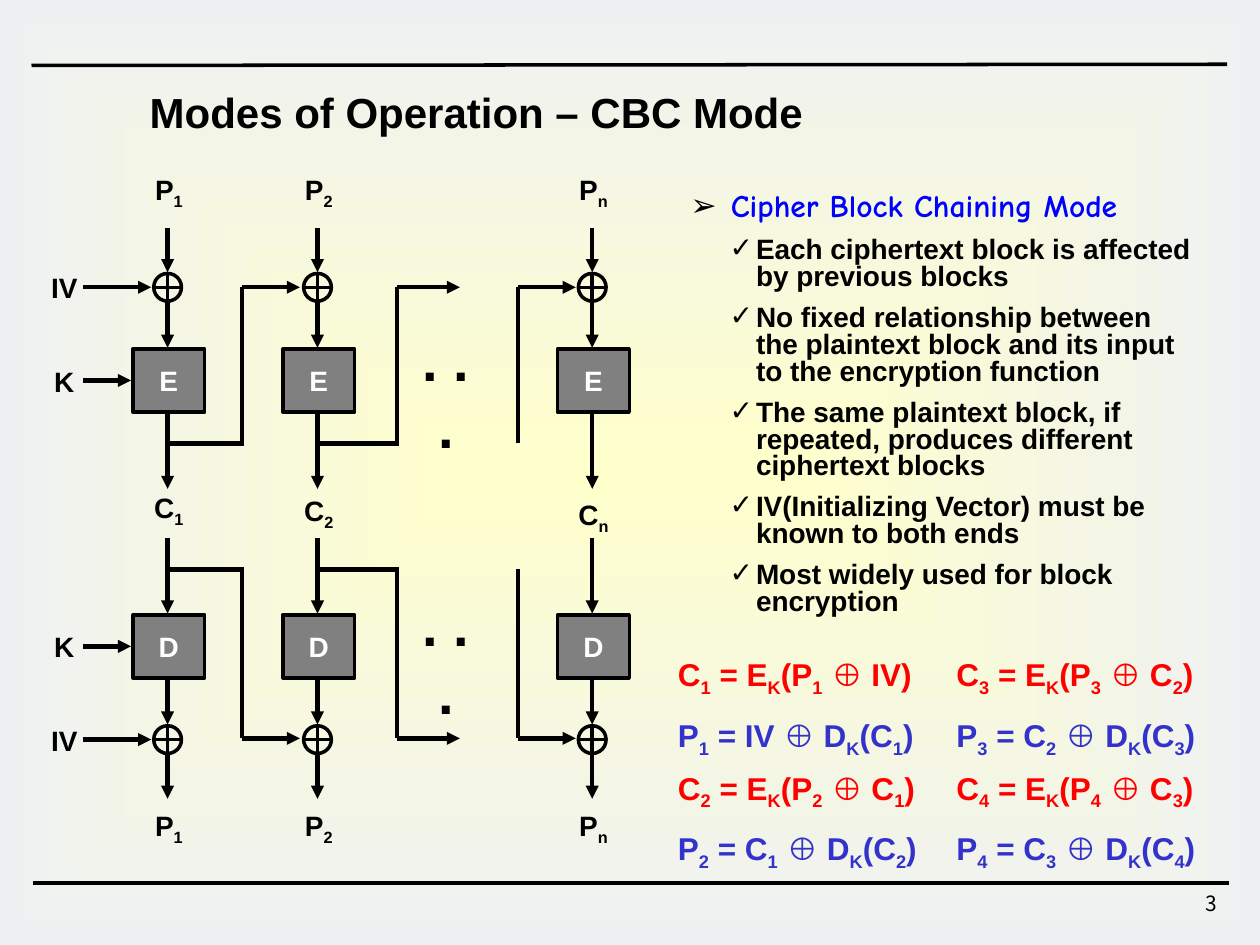
from lxml import etree
from pptx import Presentation
from pptx import util as u
from pptx.dml.color import RGBColor
from pptx.enum import shapes, text
from pptx.oxml import ns

BLACK = RGBColor(0x00, 0x00, 0x00)
WHITE = RGBColor(0xFF, 0xFF, 0xFF)
GRAY = RGBColor(0x80, 0x80, 0x80)
BLUE = RGBColor(0x00, 0x00, 0xFF)
INDIGO = RGBColor(0x33, 0x33, 0xCC)
RED = RGBColor(0xFF, 0x00, 0x00)
CREAM = RGBColor(0xFF, 0xFF, 0xCC)
MIST = RGBColor(0xEE, 0xF1, 0xF2)

WIDTH, HEIGHT = 10, 7.5
COLUMNS = {"1": 1.33, "2": 2.52, "n": 4.7}  # axis of each cipher block
BUSES = (1.92, 3.15, 4.11)  # upright parts of the chaining lines
LINKS = ((1.33, 2.38), (2.52, 3.65), (None, 4.57))  # tap and arrow end per bus
ENCRYPT_XOR, ENCRYPT_BOX = 2.28, 3.02
DECRYPT_BOX, DECRYPT_XOR = 5.13, 5.87
BOX_WIDTH, BOX_HEIGHT, XOR_SIZE = 0.57, 0.5, 0.22

POINTS = (
    "Each ciphertext block is affected by previous blocks",
    "No fixed relationship between the plaintext block and its input "
    "to the encryption function",
    "The same plaintext block, if repeated, produces different ciphertext blocks",
    "IV(Initializing Vector) must be known to both ends",
    "Most widely used for block encryption",
)
FORMULAS = (  # one row per line, "_" marks a subscript
    ("C_1 = E_K(P_1 ⊕ IV)", "C_3 = E_K(P_3 ⊕ C_2)"),
    ("P_1 = IV ⊕ D_K(C_1)", "P_3 = C_2 ⊕ D_K(C_3)"),
    ("C_2 = E_K(P_2 ⊕ C_1)", "C_4 = E_K(P_4 ⊕ C_3)"),
    ("P_2 = C_1 ⊕ D_K(C_2)", "P_4 = C_3 ⊕ D_K(C_4)"),
)


def inches(*lengths):
    return [u.Inches(length) for length in lengths]


def add_xml(parent, tag, **attributes):
    return etree.SubElement(parent, ns.qn(tag), attributes)


def set_font(para, size, color, name="Arial", bold=True):
    para.font.size, para.font.name, para.font.bold = u.Pt(size), name, bold
    para.font.color.rgb = color


def add_spans(para, content):
    """Write text in which the letter after each "_" is a subscript."""
    first, *rest = content.split("_")
    para.add_run().text = first
    for part in rest:
        span = para.add_run()
        span.text = part[0]
        span._r.get_or_add_rPr().set("baseline", "-25000")
        if part[1:]:
            para.add_run().text = part[1:]


def add_text(page, area, content, size=16, color=BLACK, name="Arial", bold=True,
             align=text.PP_ALIGN.CENTER, inset=0, wrap=False):
    frame = page.shapes.add_textbox(*inches(*area)).text_frame
    frame.word_wrap = wrap
    frame.margin_left = frame.margin_right = u.Inches(inset)
    frame.margin_top = frame.margin_bottom = u.Inches(inset / 2)
    para = frame.paragraphs[0]
    para.alignment = align
    set_font(para, size, color, name, bold)
    add_spans(para, content)


def add_label(page, center, top, content):
    add_text(page, (center - 0.12, top, 0.24, 0.27), content)


def add_line(parent, start, end, width=2.5, arrow=False):
    line = parent.shapes.add_connector(
        shapes.MSO_CONNECTOR.STRAIGHT, *inches(*start, *end))
    line.line.color.rgb = BLACK
    line.line.width = u.Pt(width)
    if arrow:
        add_xml(line.line._get_or_add_ln(), "a:tailEnd", type="triangle")
    add_xml(line._element.spPr, "a:effectLst")


def add_outlined(parent, preset, area):
    shape = parent.shapes.add_shape(preset, *inches(*area))
    shape.shadow.inherit = False
    shape.line.color.rgb = BLACK
    shape.line.width = u.Pt(2)
    return shape


def add_box(page, axis, middle, letter):
    box = add_outlined(page, shapes.MSO_SHAPE.RECTANGLE, (
        axis + 0.01 - BOX_WIDTH / 2, middle - BOX_HEIGHT / 2, BOX_WIDTH, BOX_HEIGHT))
    box.fill.solid()
    box.fill.fore_color.rgb = GRAY
    frame = box.text_frame
    frame.margin_left = frame.margin_right = 0
    frame.margin_top = frame.margin_bottom = 0
    frame.vertical_anchor = text.MSO_ANCHOR.MIDDLE
    para = frame.paragraphs[0]
    para.text, para.alignment = letter, text.PP_ALIGN.CENTER
    set_font(para, 16, WHITE)


def add_xor(page, axis, middle):
    group = page.shapes.add_group_shape()
    half = XOR_SIZE / 2
    circle = add_outlined(group, shapes.MSO_SHAPE.OVAL,
                          (axis - half, middle - half, XOR_SIZE, XOR_SIZE))
    circle.fill.background()
    add_line(group, (axis - half, middle), (axis + half, middle), 2)
    add_line(group, (axis, middle - half), (axis, middle + half), 2)


def add_frame(page):
    """Background, rules, title and page number."""
    back = page.shapes.add_shape(shapes.MSO_SHAPE.RECTANGLE, *inches(0, 0, WIDTH, HEIGHT))
    back.shadow.inherit = False
    back.line.fill.background()
    back.fill.gradient()
    for stop, color in zip(back.fill.gradient_stops, (CREAM, MIST)):
        stop.color.rgb = color
    gradient = back._element.spPr.find(ns.qn("a:gradFill"))
    gradient.remove(gradient.find(ns.qn("a:lin")))
    center = add_xml(gradient, "a:path", path="shape")
    add_xml(center, "a:fillToRect", l="50000", t="50000", r="50000", b="50000")
    add_line(page, (0.25, 0.52), (9.74, 0.51), 2)
    add_line(page, (0.26, 7.01), (9.75, 7.01), 2)
    add_text(page, (1.09, 0.64, 5.6, 0.5), "Modes of Operation – CBC Mode", 24,
             align=text.PP_ALIGN.LEFT, inset=0.1, wrap=True)
    add_text(page, (7.68, 7.02, 2.08, 0.33), "3", 12, name="Noto Sans CJK KR", bold=False,
             align=text.PP_ALIGN.RIGHT, inset=0.1, wrap=True)


def add_column(page, index, name, axis):
    """One block: encryption above the ciphertext, decryption below."""
    for top, label in ((1.37, "P_"), (3.89 + 0.03 * index, "C_"), (6.42, "P_")):
        add_label(page, axis + 0.01, top, label + name)
    arrows = ((1.81, 2.16), (2.4, 2.76), (3.28, 3.88),
              (4.27, 4.87), (5.39, 5.75), (5.98, 6.34))
    for start, end in arrows:
        add_line(page, (axis, start), (axis, end), arrow=True)
    add_box(page, axis, ENCRYPT_BOX, "E")
    add_box(page, axis, DECRYPT_BOX, "D")
    add_xor(page, axis, ENCRYPT_XOR)
    add_xor(page, axis, DECRYPT_XOR)


def add_chain(page, tap, level):
    """Carry each ciphertext from the tap height to the next XOR."""
    for bus, (start, end) in zip(BUSES, LINKS):
        if start:
            add_line(page, (start, tap), (bus + 0.02, tap))
        add_line(page, (bus, tap), (bus, level))
        add_line(page, (bus, level), (end, level), arrow=True)


def add_inputs(page):
    for content, middle in (("IV", ENCRYPT_XOR), ("K", ENCRYPT_BOX),
                            ("K", DECRYPT_BOX), ("IV", DECRYPT_XOR)):
        add_label(page, 0.51, middle - 0.13, content)
        end = 1.2 if content == "IV" else 1.04
        add_line(page, (0.66, middle), (end, middle), arrow=True)


def add_bullet(para, mark, left, hang):
    properties = para._p.get_or_add_pPr()
    properties.set("marL", str(u.Inches(left)))
    properties.set("indent", str(-u.Inches(hang)))
    color = add_xml(properties, "a:buClr")
    add_xml(color, "a:srgbClr", val=str(BLACK))
    add_xml(properties, "a:buFont", typeface="Arial")
    add_xml(properties, "a:buChar", char=mark)


def add_points(page):
    frame = page.shapes.add_textbox(*inches(5.48, 1.48, 4.01, 3.88)).text_frame
    frame.word_wrap = True
    frame.margin_left = frame.margin_right = 0
    frame.margin_top = frame.margin_bottom = 0
    heading = frame.paragraphs[0]
    heading.text = "Cipher Block Chaining Mode"
    add_bullet(heading, "➢", 0.32, 0.32)
    set_font(heading, 18, BLUE, "Comic Neue")
    for point in POINTS:
        para = frame.add_paragraph()
        para.text, para.level = point, 1
        para.line_spacing, para.space_before = 0.8, u.Pt(8)
        add_bullet(para, "✓", 0.52, 0.21)
        set_font(para, 16, BLACK)


def add_formulas(page):
    for row, formulas in enumerate(FORMULAS):
        top = 5.2 + 0.9 * (row // 2) + 0.48 * (row % 2)
        for column, formula in enumerate(formulas):
            add_text(page, (5.38 + 2.21 * column, top, 1.95, 0.3), formula, 18,
                     (RED, INDIGO)[row % 2], align=text.PP_ALIGN.LEFT, wrap=True)


def main():
    deck = Presentation()
    deck.slide_width, deck.slide_height = inches(WIDTH, HEIGHT)
    page = deck.slides.add_slide(deck.slide_layouts[6])
    add_frame(page)
    # Cipher diagram
    for index, (name, axis) in enumerate(COLUMNS.items()):
        add_column(page, index, name, axis)
    add_chain(page, 3.52, ENCRYPT_XOR)
    add_chain(page, 4.52, DECRYPT_XOR - 0.01)
    add_inputs(page)
    for middle in (ENCRYPT_BOX, DECRYPT_BOX):
        add_text(page, (3.29, middle - 0.44, 0.5, 0.53), ". . .", 32, wrap=True)
    # Explanation
    add_points(page)
    add_formulas(page)
    deck.save("out.pptx")


if __name__ == "__main__":
    main()
